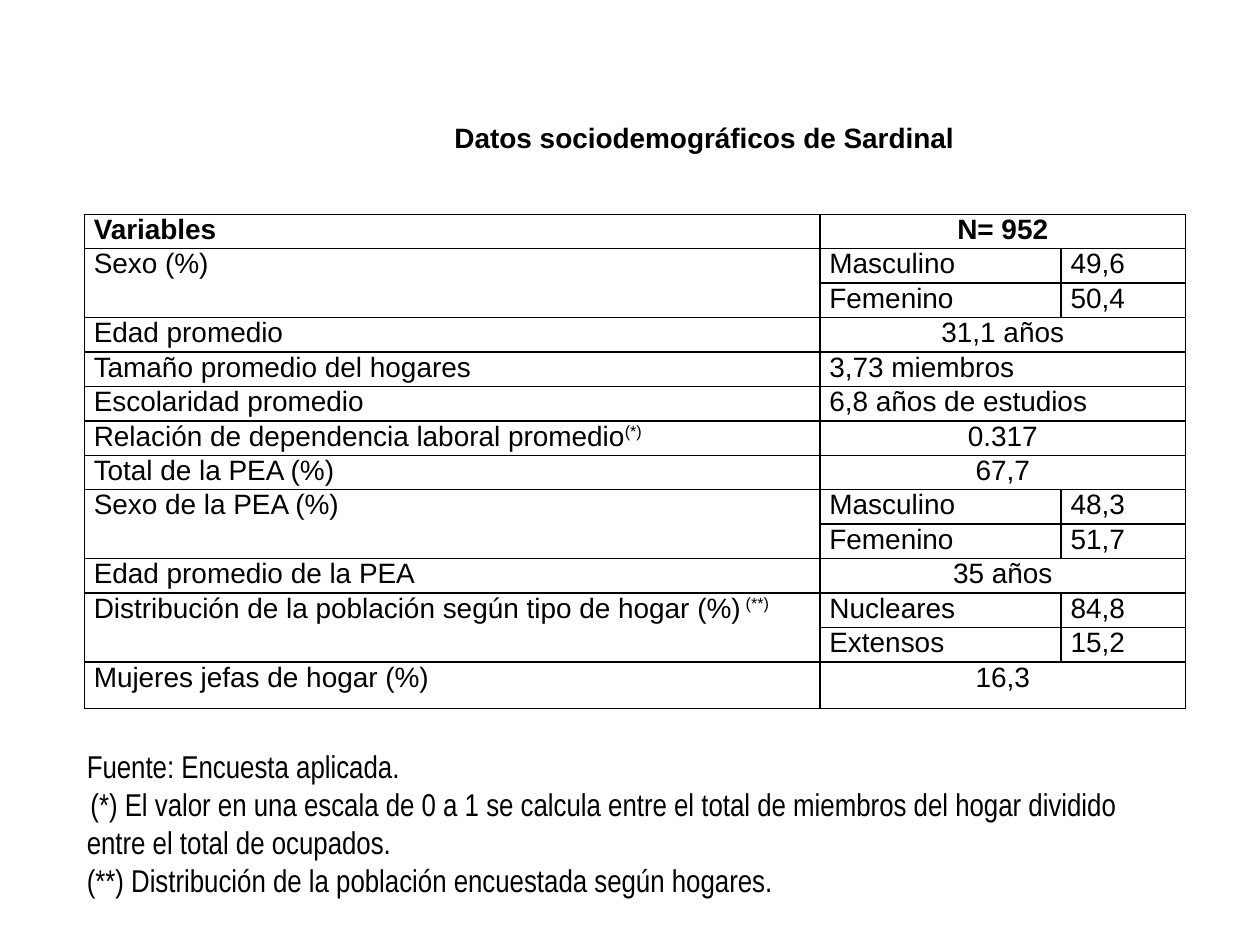
from lxml.etree import SubElement
from pptx import Presentation
from pptx.dml.color import RGBColor
from pptx.enum.text import MSO_ANCHOR, MSO_AUTO_SIZE, PP_ALIGN as Align
from pptx.oxml.ns import qn
from pptx.util import Cm, Pt

BLACK = RGBColor(0x00, 0x00, 0x00)
SUPERSCRIPT = "30000"


def format_runs(paragraph, font_name, size, bold=False):
    for run in paragraph.runs:
        run.font.name = font_name
        run.font.size = Pt(size)
        run.font.bold = bold
        run.font.color.rgb = BLACK


def add_borders(cell):
    properties = cell._tc.get_or_add_tcPr()
    for side in ("a:lnL", "a:lnR", "a:lnT", "a:lnB"):
        line = SubElement(properties, qn(side), w=str(Pt(1)))
        fill = SubElement(line, qn("a:solidFill"))
        SubElement(fill, qn("a:srgbClr"), val=str(BLACK))


presentation = Presentation()
presentation.slide_width = Cm(25.4)
presentation.slide_height = Cm(19.05)
slide = presentation.slides.add_slide(presentation.slide_layouts[6])

# Each variable: label, superscript mark, value alignment, rows of values
VARIABLES = [
    ("Variables", "", Align.CENTER, [["N= 952"]]),
    ("Sexo (%)", "", Align.JUSTIFY, [["Masculino", "49,6"], ["Femenino", "50,4"]]),
    ("Edad promedio", "", Align.CENTER, [["31,1 años"]]),
    ("Tamaño promedio del hogares", "", Align.JUSTIFY, [["3,73 miembros"]]),
    ("Escolaridad promedio", "", Align.JUSTIFY, [["6,8 años de estudios"]]),
    ("Relación de dependencia laboral promedio", "(*)", Align.CENTER, [["0.317"]]),
    ("Total de la PEA (%)", "", Align.CENTER, [["67,7"]]),
    ("Sexo de la PEA (%)", "", Align.JUSTIFY, [["Masculino", "48,3"], ["Femenino", "51,7"]]),
    ("Edad promedio de la PEA", "", Align.CENTER, [["35 años"]]),
    ("Distribución de la población según tipo de hogar (%)", " (**)", Align.JUSTIFY,
     [["Nucleares", "84,8"], ["Extensos", "15,2"]]),
    ("Mujeres jefas de hogar (%)", "", Align.CENTER, [["16,3"]]),
]

# Table grid
row_count = sum(len(values) for *_, values in VARIABLES)
table = slide.shapes.add_table(row_count, 3, Cm(1.7), Cm(4.32), Cm(22.2), Cm(10)).table
table.first_row = False
table.horz_banding = False
for column, width in zip(table.columns, (14.83, 4.86, 2.51)):
    column.width = Cm(width)
for row in table.rows:
    row.height = Cm(0.695)
table.rows[row_count - 1].height = Cm(0.94)

for cell in table.iter_cells():
    cell.margin_left = cell.margin_right = Cm(0.19)
    cell.margin_top = cell.margin_bottom = 0
    add_borders(cell)
    cell.fill.background()

# Table contents
top = 0
for label, mark, alignment, values in VARIABLES:
    label_cell = table.cell(top, 0)
    if len(values) > 1:
        label_cell.merge(table.cell(top + len(values) - 1, 0))
    paragraph = label_cell.text_frame.paragraphs[0]
    paragraph.text = label
    paragraph.alignment = Align.JUSTIFY
    if mark:
        run = paragraph.add_run()
        run.text = mark
        run.font._element.set("baseline", SUPERSCRIPT)
    format_runs(paragraph, "Arial", 16, bold=top == 0)

    for row_index, row_values in enumerate(values, top):
        if len(row_values) == 1:
            table.cell(row_index, 1).merge(table.cell(row_index, 2))
        for column_index, value in enumerate(row_values, 1):
            paragraph = table.cell(row_index, column_index).text_frame.paragraphs[0]
            paragraph.text = value
            paragraph.alignment = alignment
            format_runs(paragraph, "Arial", 16, bold=top == 0)
    top += len(values)

# Title
title = slide.shapes.add_textbox(Cm(8.84), Cm(2.29), Cm(10.72), Cm(0.94))
text_frame = title.text_frame
text_frame.word_wrap = False
text_frame.auto_size = MSO_AUTO_SIZE.SHAPE_TO_FIT_TEXT
text_frame.vertical_anchor = MSO_ANCHOR.MIDDLE
text_frame.text = "Datos sociodemográficos de Sardinal"
text_frame.paragraphs[0].alignment = Align.CENTER
format_runs(text_frame.paragraphs[0], "Arial", 16, bold=True)

# Source and notes
notes = slide.shapes.add_textbox(Cm(1.5), Cm(14.94), Cm(22.4), Cm(3.33))
text_frame = notes.text_frame
text_frame.word_wrap = True
text_frame.auto_size = MSO_AUTO_SIZE.SHAPE_TO_FIT_TEXT
text_frame.text = "\n".join([
    "Fuente: Encuesta aplicada.",
    " ",
    "(**) Distribución de la población encuestada según hogares.",
])
scale_note = text_frame.paragraphs[1]
scale_note.add_run().text = (
    "(*) El valor en una escala de 0 a 1 se calcula entre el total de miembros "
    "del hogar dividido entre el total de ocupados."
)
for paragraph in text_frame.paragraphs:
    format_runs(paragraph, "Arial Narrow", 18)
leading_space = scale_note.runs[0]
leading_space.font.name = "Vollkorn"
leading_space.font._element.set("baseline", SUPERSCRIPT)

presentation.save("out.pptx")
